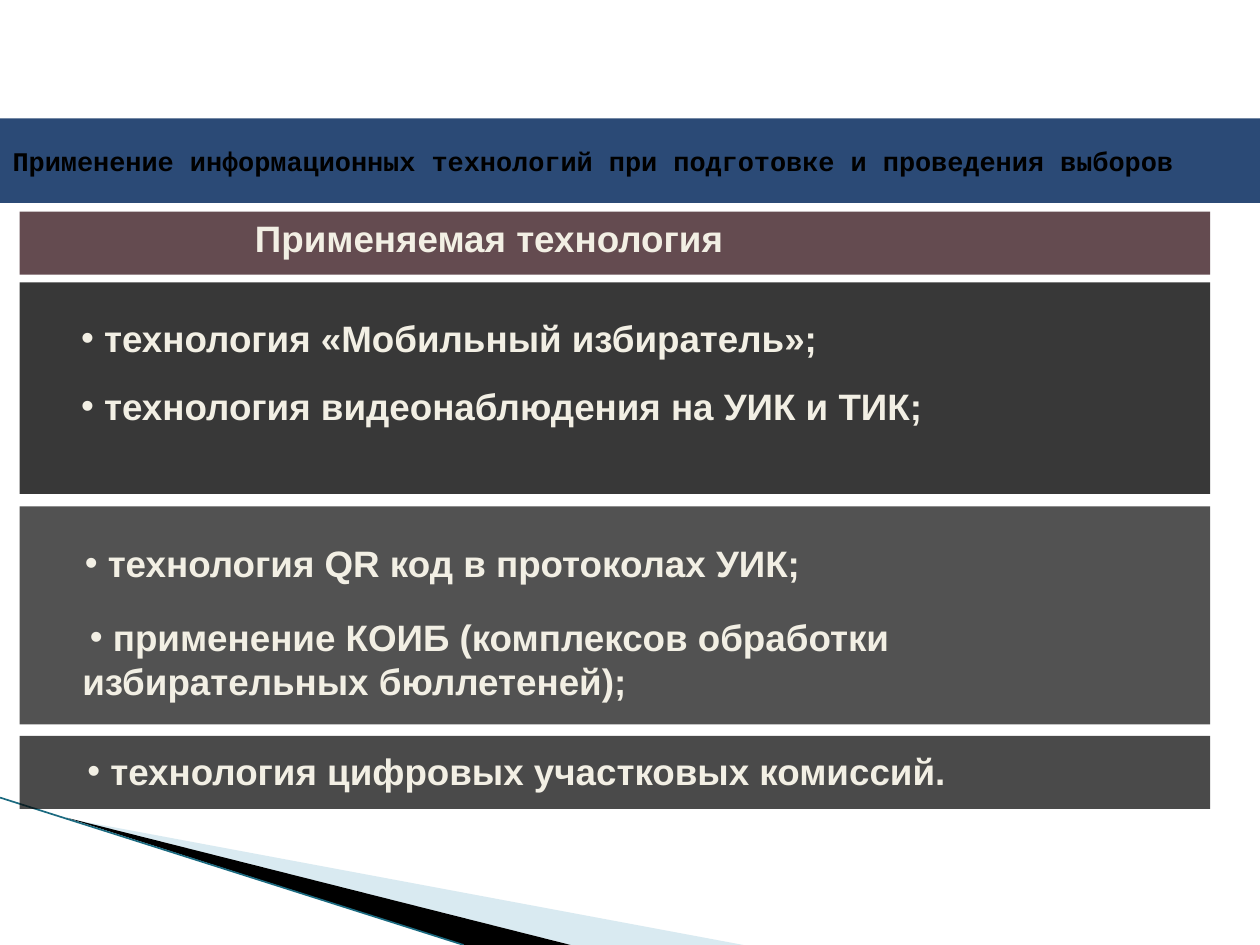
from lxml import etree
from pptx import Presentation
from pptx.dml.color import RGBColor
from pptx.enum.shapes import MSO_CONNECTOR, MSO_SHAPE
from pptx.enum.text import MSO_ANCHOR, PP_ALIGN
from pptx.oxml.ns import qn
from pptx.util import Inches, Pt

RECTANGLE = MSO_SHAPE.RECTANGLE
STRAIGHT = MSO_CONNECTOR.STRAIGHT
MIDDLE = MSO_ANCHOR.MIDDLE
LEFT = PP_ALIGN.LEFT

COLORS = {
    "title_band": "2B4A76", "title_text": "000000", "text": "F2EFE4",
    "header": "3E1E25", "first": "232323", "second": "121212", "third": "070707",
    "pale_wedge": "A0CBDC", "dark_wedge": "000000", "edge": "1B6A80",
}
WIDTH, HEIGHT = 10, 7.5
PANEL_LEFT, PANEL_WIDTH = 0.155, 9.45
TEXT_INDENT, BULLET_INDENT = 0.32, 0.06


def color(name):
    return RGBColor.from_string(COLORS[name])


def paint(shape, name, opacity=100):
    """Solid fill without outline or shadow; opacity in percent."""
    shape.shadow.inherit = False
    shape.line.fill.background()
    shape.fill.solid()
    shape.fill.fore_color.rgb = color(name)
    if opacity < 100:
        fill = shape._element.spPr.find(qn("a:solidFill"))
        etree.SubElement(fill[0], qn("a:alpha"), val=str(opacity * 1000))


def add_wedge(slide, points, name, opacity=100):
    start, *others = [(Inches(x), Inches(y)) for x, y in points]
    builder = slide.shapes.build_freeform(*start)
    builder.add_line_segments(others, close=True)
    paint(builder.convert_to_shape(), name, opacity)


def add_corner(slide):
    """Wedges fanning out of the lower left edge."""
    add_wedge(slide, [(0.55, 6.5), (5.9, HEIGHT), (4.53, HEIGHT)], "pale_wedge", 40)
    add_wedge(slide, [(0.53, 6.49), (4.53, HEIGHT), (3.68, HEIGHT)], "dark_wedge")
    edge = slide.shapes.add_connector(
        STRAIGHT, 0, Inches(6.33), Inches(3.68), Inches(HEIGHT))
    edge.line.color.rgb = color("edge")
    edge.line.width = Pt(0.95)
    etree.SubElement(edge._element.spPr, qn("a:effectLst"))


def add_title(slide, top, height, text):
    title = slide.shapes.title
    title.left, title.top = 0, Inches(top)
    title.width, title.height = Inches(WIDTH), Inches(height)
    title.fill.solid()
    title.fill.fore_color.rgb = color("title_band")
    frame = title.text_frame
    frame.text = text
    frame.vertical_anchor = MIDDLE
    paragraph = frame.paragraphs[0]
    paragraph.alignment = LEFT
    font = paragraph.font
    font.name, font.size, font.bold = "Courier New", Pt(15.4), True
    font.color.rgb = color("title_text")


def add_text(slide, left, top, width, height, lines, bulleted):
    box = slide.shapes.add_textbox(
        Inches(left), Inches(top), Inches(width), Inches(height))
    frame = box.text_frame
    frame.word_wrap = True
    for index, line in enumerate(lines):
        paragraph = frame.paragraphs[0] if index == 0 else frame.add_paragraph()
        paragraph.text = f" {line}" if bulleted else line
        paragraph.space_after = Pt(13.5)
        properties = paragraph._p.get_or_add_pPr()
        properties.set("marL", str(Inches(TEXT_INDENT)))
        properties.set("indent", str(Inches(BULLET_INDENT) if bulleted else 0))
        if bulleted:
            etree.SubElement(properties, qn("a:buFont"), typeface="Arial")
            etree.SubElement(properties, qn("a:buChar"), char="•")
        font = paragraph.font
        font.name, font.size, font.bold = "Arial", Pt(21), True
        font.color.rgb = color("text")


def add_panel(slide, top, height, name, opacity, texts, bulleted=True):
    """Panel with text boxes, each placed by its offset from the panel's corner."""
    panel = slide.shapes.add_shape(
        RECTANGLE, Inches(PANEL_LEFT), Inches(top), Inches(PANEL_WIDTH), Inches(height))
    paint(panel, name, opacity)
    for left, down, width, text_height, lines in texts:
        add_text(slide, PANEL_LEFT + left, top + down, width, text_height, lines, bulleted)


def main():
    presentation = Presentation()
    presentation.slide_width = Inches(WIDTH)
    presentation.slide_height = Inches(HEIGHT)
    slide = presentation.slides.add_slide(presentation.slide_layouts[5])

    add_corner(slide)
    add_title(slide, 0.94, 0.67,
              "Применение информационных технологий при подготовке и проведения выборов")

    # Heading and three groups of technologies
    add_panel(slide, 1.68, 0.5, "header", 80,
              [(1.45, -0.02, 4.42, 0.45, ["Применяемая технология"])], bulleted=False)
    add_panel(slide, 2.24, 1.68, "first", 90, [
        (0.01, 0.22, 7.42, 1.28, ["технология «Мобильный избиратель»;",
                                  "технология видеонаблюдения на УИК и ТИК;"])])
    add_panel(slide, 4.02, 1.73, "second", 73, [
        (0.04, 0.22, 6.97, 0.45, ["технология QR код в протоколах УИК;"]),
        (0.08, 0.81, 9.26, 0.81,
         ["применение КОИБ (комплексов обработки избирательных бюллетеней);"])])
    add_panel(slide, 5.84, 0.58, "third", 73, [
        (0.06, 0.05, 8.56, 0.45, ["технология цифровых участковых комиссий."])])

    presentation.save("out.pptx")


if __name__ == "__main__":
    main()
